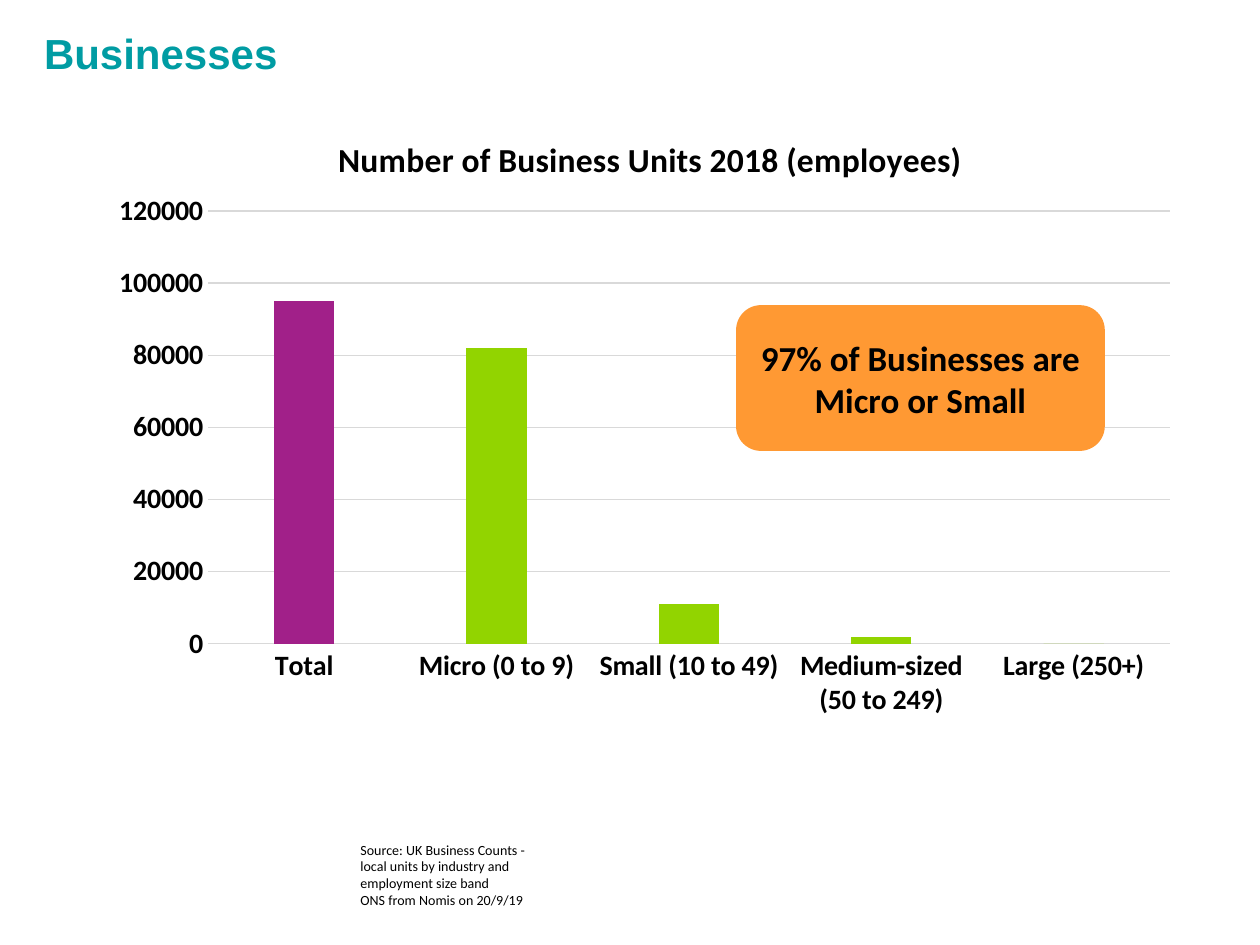
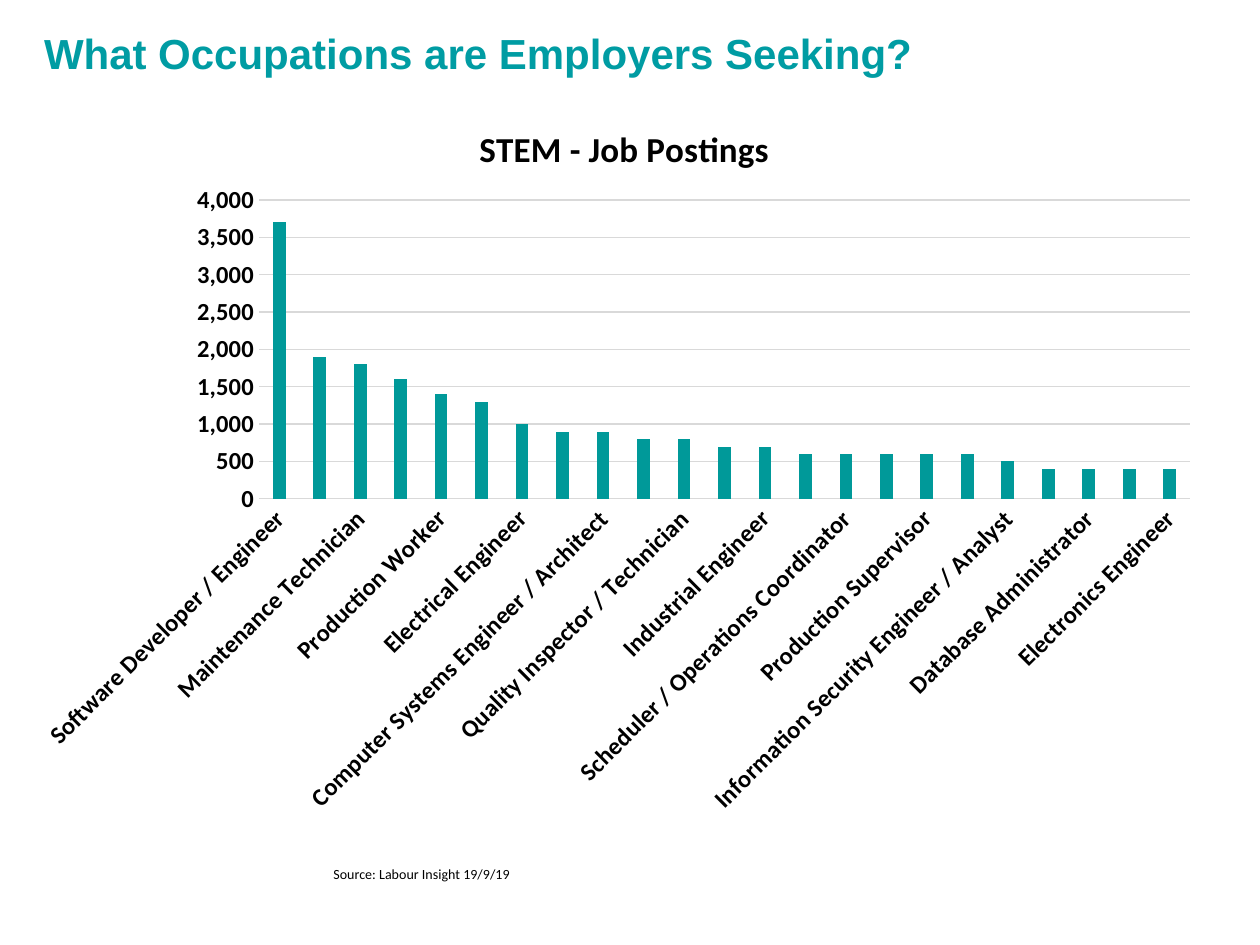
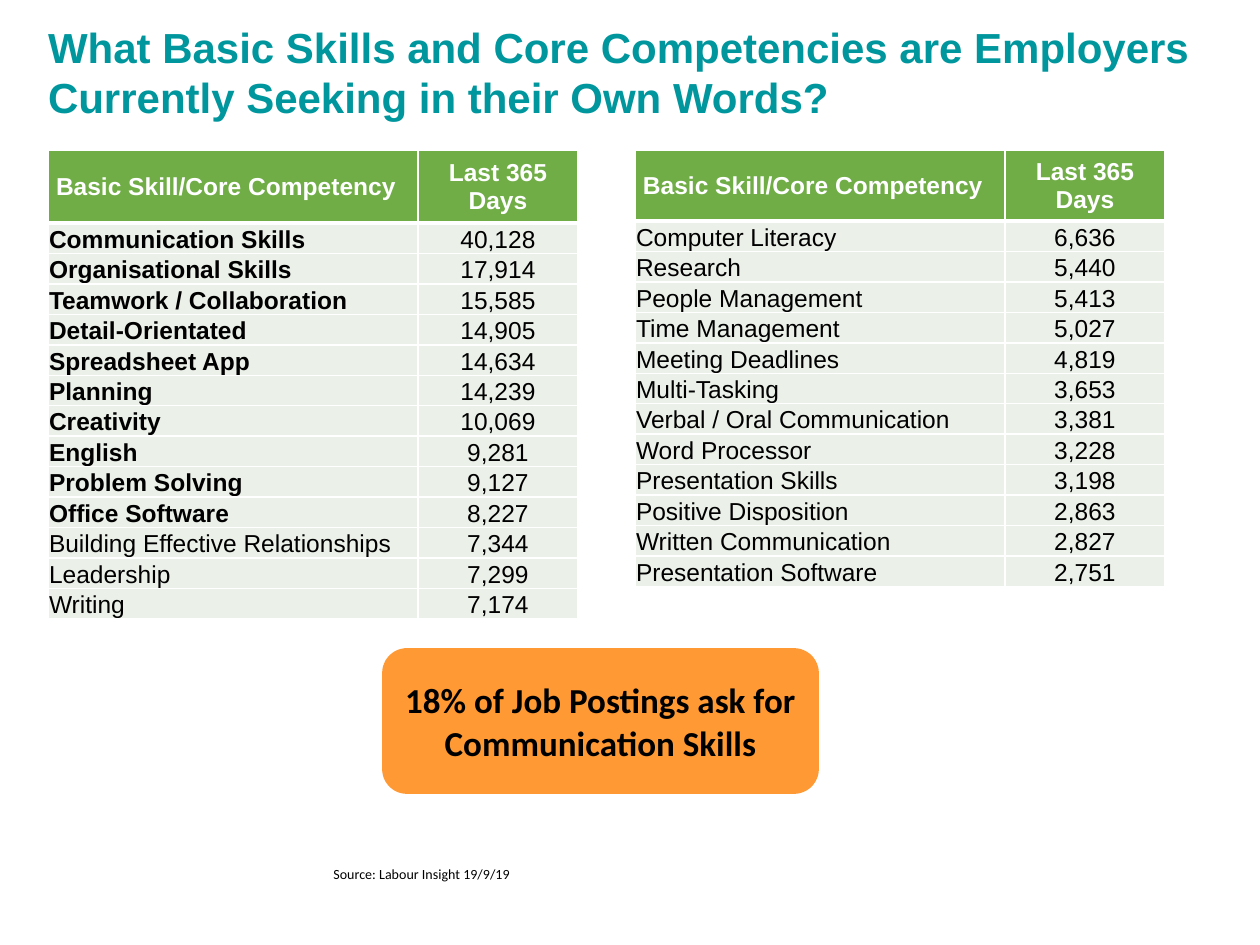
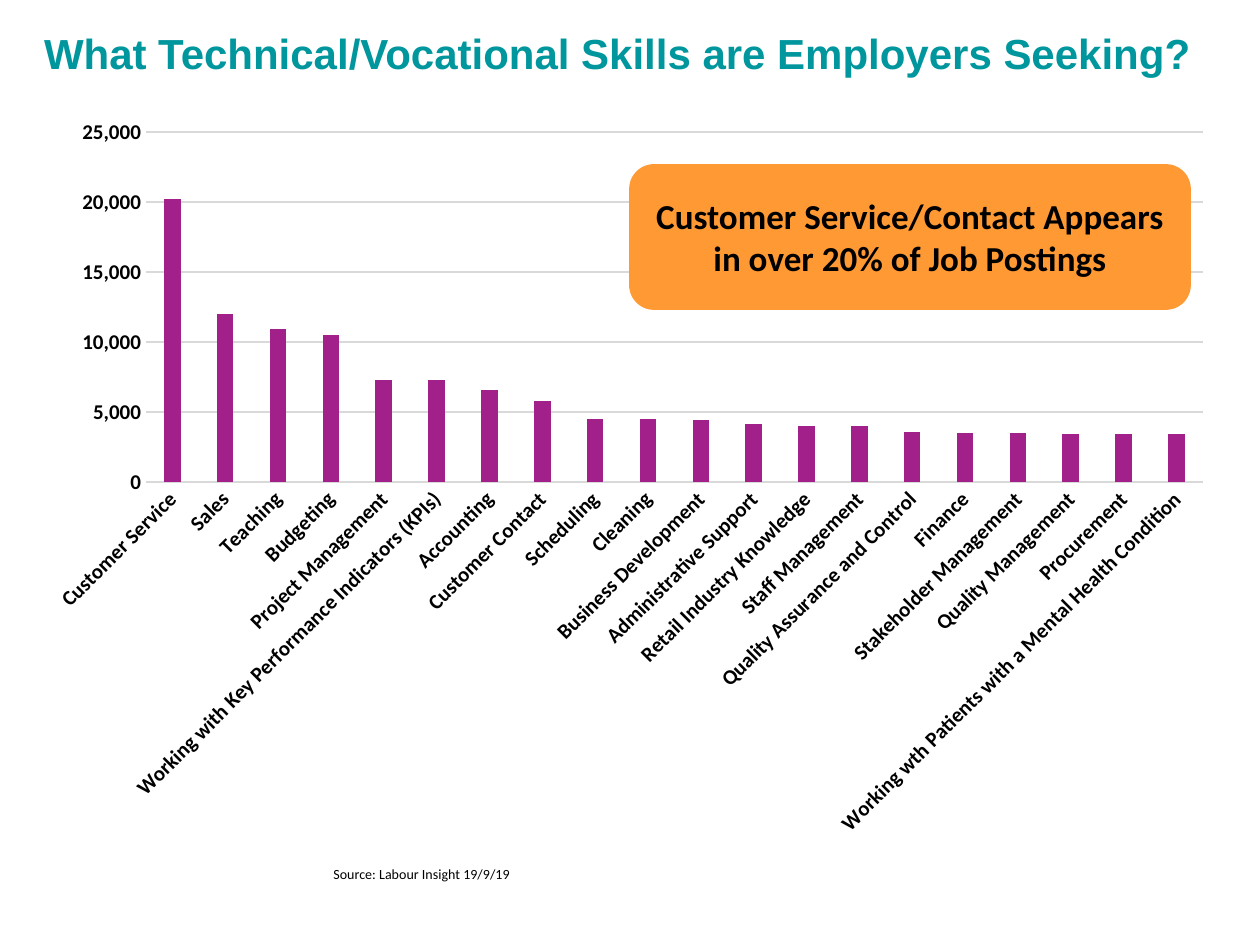
import pptx
import pptx.chart.data
import pptx.dml.color
import pptx.enum.chart
import pptx.enum.shapes
import pptx.enum.text
import pptx.oxml
import pptx.oxml.ns
import pptx.util

PIXELS_PER_INCH = 126
PAGE_WIDTH, PAGE_HEIGHT = 1260, 945
TITLE_ONLY_LAYOUT = 5

TEAL = "009CA3"
DEEP_TEAL = "00969D"
BAR_TEAL = "009999"
PURPLE = "A12089"
LIME = "92D400"
ORANGE = "FF9933"
TABLE_GREEN = "70AD47"
TABLE_PALE = "EBF1E9"
GRID_GREY = "D9D9D9"
BLACK = "000000"
WHITE = "FFFFFF"

TITLE_BOX = (20, 21, 1194, 63)
SOURCE_BOX = (321, 859, 205, 47)
SOURCE_LINES = ["Source: Labour Insight 19/9/19"]

BUSINESS_UNITS = {
    "Total": 95000,
    "Micro (0 to 9)": 82000,
    "Small (10 to 49)": 11000,
    "Medium-sized (50 to 249)": 2000,
    "Large (250+)": 0,
}

STEM_POSTINGS = {
    "Software Developer / Engineer": 3700,
    "Computer Support Specialist": 1900,
    "Maintenance Technician": 1800,
    "Mechanical Engineer": 1600,
    "Production Worker": 1400,
    "Civil Engineer": 1300,
    "Electrical Engineer": 1000,
    "Web Developer": 900,
    "Computer Systems Engineer / Architect": 900,
    "IT Project Manager": 800,
    "Quality Inspector / Technician": 800,
    "Validation Engineer": 700,
    "Industrial Engineer": 700,
    "Product Development Engineer": 600,
    "Scheduler / Operations Coordinator": 600,
    "Production Plant Manager": 600,
    "Production Supervisor": 600,
    "Systems Analyst": 600,
    "Information Security Engineer / Analyst": 500,
    "Software QA Engineer / Tester": 400,
    "Database Administrator": 400,
    "Compliance Manager": 400,
    "Electronics Engineer": 400,
}

TECHNICAL_SKILLS = {
    "Customer Service": 20200,
    "Sales": 12000,
    "Teaching": 10900,
    "Budgeting": 10500,
    "Project Management": 7300,
    "Working with Key Performance Indicators (KPIs)": 7300,
    "Accounting": 6600,
    "Customer Contact": 5800,
    "Scheduling": 4500,
    "Cleaning": 4500,
    "Business Development": 4400,
    "Administrative Support": 4100,
    "Retail Industry Knowledge": 4000,
    "Staff Management": 4000,
    "Quality Assurance and Control": 3600,
    "Finance": 3500,
    "Stakeholder Management": 3500,
    "Quality Management": 3400,
    "Procurement": 3400,
    "Working wth Patients with a Mental Health Condition": 3400,
}

TOP_SKILLS = [
    ("Communication Skills", "40,128"),
    ("Organisational Skills", "17,914"),
    ("Teamwork / Collaboration", "15,585"),
    ("Detail-Orientated", "14,905"),
    ("Spreadsheet App", "14,634"),
    ("Planning", "14,239"),
    ("Creativity", "10,069"),
    ("English", "9,281"),
    ("Problem Solving", "9,127"),
    ("Office Software", "8,227"),
    ("Building Effective Relationships", "7,344"),
    ("Leadership", "7,299"),
    ("Writing", "7,174"),
]

OTHER_SKILLS = [
    ("Computer Literacy", "6,636"),
    ("Research", "5,440"),
    ("People Management", "5,413"),
    ("Time Management", "5,027"),
    ("Meeting Deadlines", "4,819"),
    ("Multi-Tasking", "3,653"),
    ("Verbal / Oral Communication", "3,381"),
    ("Word Processor", "3,228"),
    ("Presentation Skills", "3,198"),
    ("Positive Disposition", "2,863"),
    ("Written Communication", "2,827"),
    ("Presentation Software", "2,751"),
]


def px(length):
    return pptx.util.Emu(round(length * 914400 / PIXELS_PER_INCH))


def place(box):
    return [px(length) for length in box]


def color(value):
    return pptx.dml.color.RGBColor.from_string(value)


def fill(target, value):
    target.fill.solid()
    target.fill.fore_color.rgb = color(value)


def set_font(font, size, value, bold=False, name="Calibri"):
    font.name = name
    font.size = pptx.util.Pt(size)
    font.bold = bold
    font.color.rgb = color(value)


def format_runs(frame, *style, align=pptx.enum.text.PP_ALIGN.LEFT):
    for para in frame.paragraphs:
        para.alignment = align
        for span in para.runs:
            set_font(span.font, *style)


def add_page(deck, title, box=TITLE_BOX, value=TEAL, indent=24):
    page = deck.slides.add_slide(deck.slide_layouts[TITLE_ONLY_LAYOUT])
    heading = page.shapes.title
    heading.left, heading.top, heading.width, heading.height = place(box)
    frame = heading.text_frame
    frame.text = title
    frame.word_wrap = True
    frame.auto_size = pptx.enum.text.MSO_AUTO_SIZE.SHAPE_TO_FIT_TEXT
    frame.vertical_anchor = pptx.enum.text.MSO_ANCHOR.TOP
    frame.margin_left = px(indent)
    format_runs(frame, 24, value, True, "Arial")
    return page


def add_source(page, lines=SOURCE_LINES, box=SOURCE_BOX):
    frame = page.shapes.add_textbox(*place(box)).text_frame
    frame.word_wrap = True
    frame.auto_size = pptx.enum.text.MSO_AUTO_SIZE.SHAPE_TO_FIT_TEXT
    frame.text = "\n".join(lines)
    format_runs(frame, 8, BLACK)


def add_callout(page, text, box):
    shape = page.shapes.add_shape(
        pptx.enum.shapes.MSO_SHAPE.ROUNDED_RECTANGLE, *place(box))
    shape.shadow.inherit = False
    fill(shape, ORANGE)
    shape.line.color.rgb = color(ORANGE)
    shape.line.width = pptx.util.Pt(1)
    frame = shape.text_frame
    frame.word_wrap = True
    frame.vertical_anchor = pptx.enum.text.MSO_ANCHOR.MIDDLE
    frame.text = text
    format_runs(frame, 20, BLACK, True, align=pptx.enum.text.PP_ALIGN.CENTER)


def set_layout(parent, index, settings):
    for old in parent.findall(pptx.oxml.ns.qn("c:layout")):
        parent.remove(old)
    entries = "".join(f'<c:{tag} val="{value}"/>' for tag, value in settings.items())
    parent.insert(index, pptx.oxml.parse_xml(
        f'<c:layout {pptx.oxml.ns.nsdecls("c")}>'
        f"<c:manualLayout>{entries}</c:manualLayout></c:layout>"))


def set_plot_area(chart, box, area):
    left, top, width, height = area
    set_layout(chart._chartSpace.chart.plotArea, 0, {
        "layoutTarget": "inner", "xMode": "edge", "yMode": "edge",
        "x": round(left / box[2], 4), "y": round(top / box[3], 4),
        "w": round(width / box[2], 4), "h": round(height / box[3], 4)})


def set_chart_title(chart, box, text, size, corner):
    frame = chart.chart_title.text_frame
    frame.text = text
    set_font(frame.paragraphs[0].runs[0].font, size, BLACK, True)
    chart.chart_title.include_in_layout = False
    set_layout(chart.chart_title._element, 1, {
        "xMode": "edge", "yMode": "edge",
        "x": round(corner[0] / box[2], 4), "y": round(corner[1] / box[3], 4)})


def style_axes(chart, size, top, step, number_format, slanted):
    for axis in (chart.category_axis, chart.value_axis):
        axis.major_tick_mark = pptx.enum.chart.XL_TICK_MARK.NONE
        axis.minor_tick_mark = pptx.enum.chart.XL_TICK_MARK.NONE
        set_font(axis.tick_labels.font, size, BLACK, True)
    values = chart.value_axis
    values.minimum_scale, values.maximum_scale, values.major_unit = 0, top, step
    values.tick_labels.number_format = number_format
    values.tick_labels.number_format_is_linked = False
    values.format.line.fill.background()
    values.has_major_gridlines = True
    for line in (values.major_gridlines.format.line, chart.category_axis.format.line):
        line.color.rgb = color(GRID_GREY)
        line.width = pptx.util.Pt(0.75)
    if slanted:
        labels = chart.category_axis._element.find(pptx.oxml.ns.qn("c:txPr"))
        labels.find(pptx.oxml.ns.qn("a:bodyPr")).set("rot", "-2700000")


def add_columns(page, box, values, bar_color, size, area, top, step,
                number_format="#,##0", slanted=True):
    data = pptx.chart.data.CategoryChartData()
    data.categories = list(values)
    data.add_series("Series 1", list(values.values()))
    chart = page.shapes.add_chart(
        pptx.enum.chart.XL_CHART_TYPE.COLUMN_CLUSTERED, *place(box), data).chart
    chart.has_legend = False
    chart.has_title = False
    set_font(chart.font, size, BLACK, True)
    plot = chart.plots[0]
    plot.vary_by_categories = False
    plot.gap_width = 219
    plot.overlap = -27
    fill(plot.series[0].format, bar_color)
    style_axes(chart, size, top, step, number_format, slanted)
    set_plot_area(chart, box, area)
    return chart


def set_borders(cell, bottom):
    properties = cell._tc.get_or_add_tcPr()
    for index, (side, points) in enumerate(
            (("L", 1), ("R", 1), ("T", 1), ("B", bottom))):
        properties.insert(index, pptx.oxml.parse_xml(
            f'<a:ln{side} {pptx.oxml.ns.nsdecls("a")} w="{points * 12700}">'
            f'<a:solidFill><a:srgbClr val="{WHITE}"/></a:solidFill></a:ln{side}>'))


def fill_cell(cell, text, column, is_header, bold):
    cell.margin_left = px(8 if is_header and column == 0 else 1)
    cell.margin_right = cell.margin_top = px(1)
    cell.margin_bottom = 0
    anchors = pptx.enum.text.MSO_ANCHOR
    cell.vertical_anchor = anchors.MIDDLE if is_header else anchors.BOTTOM
    fill(cell, TABLE_GREEN if is_header else TABLE_PALE)
    set_borders(cell, 3 if is_header else 1)
    cell.text_frame.text = text
    aligns = pptx.enum.text.PP_ALIGN
    format_runs(cell.text_frame, 14, WHITE if is_header else BLACK, bold, "Arial",
                align=aligns.CENTER if column else aligns.LEFT)


def add_skill_table(page, box, skills, header_height, bold_count=0):
    rows = [("Basic Skill/Core Competency", "Last 365 Days")] + skills
    table = page.shapes.add_table(len(rows), 2, *place(box)).table
    table.horz_banding = False
    table.columns[0].width = px(370)
    table.columns[1].width = px(box[2] - 370)
    for index, row in enumerate(rows):
        is_header = index == 0
        table.rows[index].height = px(header_height if is_header else 30)
        for column, text in enumerate(row):
            bold = is_header or (column == 0 and index <= bold_count)
            fill_cell(table.cell(index, column), text, column, is_header, bold)


def build_businesses(deck):
    page = add_page(deck, "Businesses")
    box = (96, 100, 1096, 631)
    chart = add_columns(page, box, BUSINESS_UNITS, LIME, 16, (112, 111, 962, 433),
                        120000, 20000, "General", slanted=False)
    fill(chart.plots[0].series[0].points[0].format, PURPLE)
    set_chart_title(chart, box, "Number of Business Units 2018 (employees)",
                    19.2, (236, 30))
    add_callout(page, "97% of Businesses are Micro or Small", (737, 306, 367, 144))
    add_source(page, [
        "Source: UK Business Counts - local units by industry and employment size band",
        "ONS from Nomis on 20/9/19"], (348, 835, 205, 97))


def build_occupations(deck):
    page = add_page(deck, "What Occupations are Employers Seeking?")
    add_source(page)
    box = (20, 84, 1194, 745)
    chart = add_columns(page, box, STEM_POSTINGS, BAR_TEAL, 14,
                        (239, 116, 931, 299), 4000, 500)
    set_chart_title(chart, box, "STEM - Job Postings", 20, (453, 34))


def build_competencies(deck):
    page = add_page(
        deck, "What Basic Skills and Core Competencies are Employers "
        "Currently Seeking in their Own Words?", (35, 15, 1198, 115), DEEP_TEAL, 13)
    add_skill_table(page, (48, 150, 530, 463), TOP_SKILLS, 73, bold_count=10)
    add_skill_table(page, (635, 150, 530, 431), OTHER_SKILLS, 71)
    add_callout(page, "18% of Job Postings ask for Communication Skills",
                (383, 649, 435, 144))
    add_source(page)


def build_technical_skills(deck):
    page = add_page(deck, "What Technical/Vocational Skills are Employers Seeking?",
                    (20, 21, 1194, 115), DEEP_TEAL)
    add_columns(page, (33, 105, 1194, 746), TECHNICAL_SKILLS, PURPLE, 12,
                (113, 27, 1057, 350), 25000, 5000)
    add_callout(page, "Customer Service/Contact Appears in over 20% of Job Postings",
                (630, 165, 560, 144))
    add_source(page)


def main():
    deck = pptx.Presentation()
    deck.slide_width, deck.slide_height = px(PAGE_WIDTH), px(PAGE_HEIGHT)
    build_businesses(deck)
    build_occupations(deck)
    build_competencies(deck)
    build_technical_skills(deck)
    deck.save("out.pptx")


if __name__ == "__main__":
    main()
